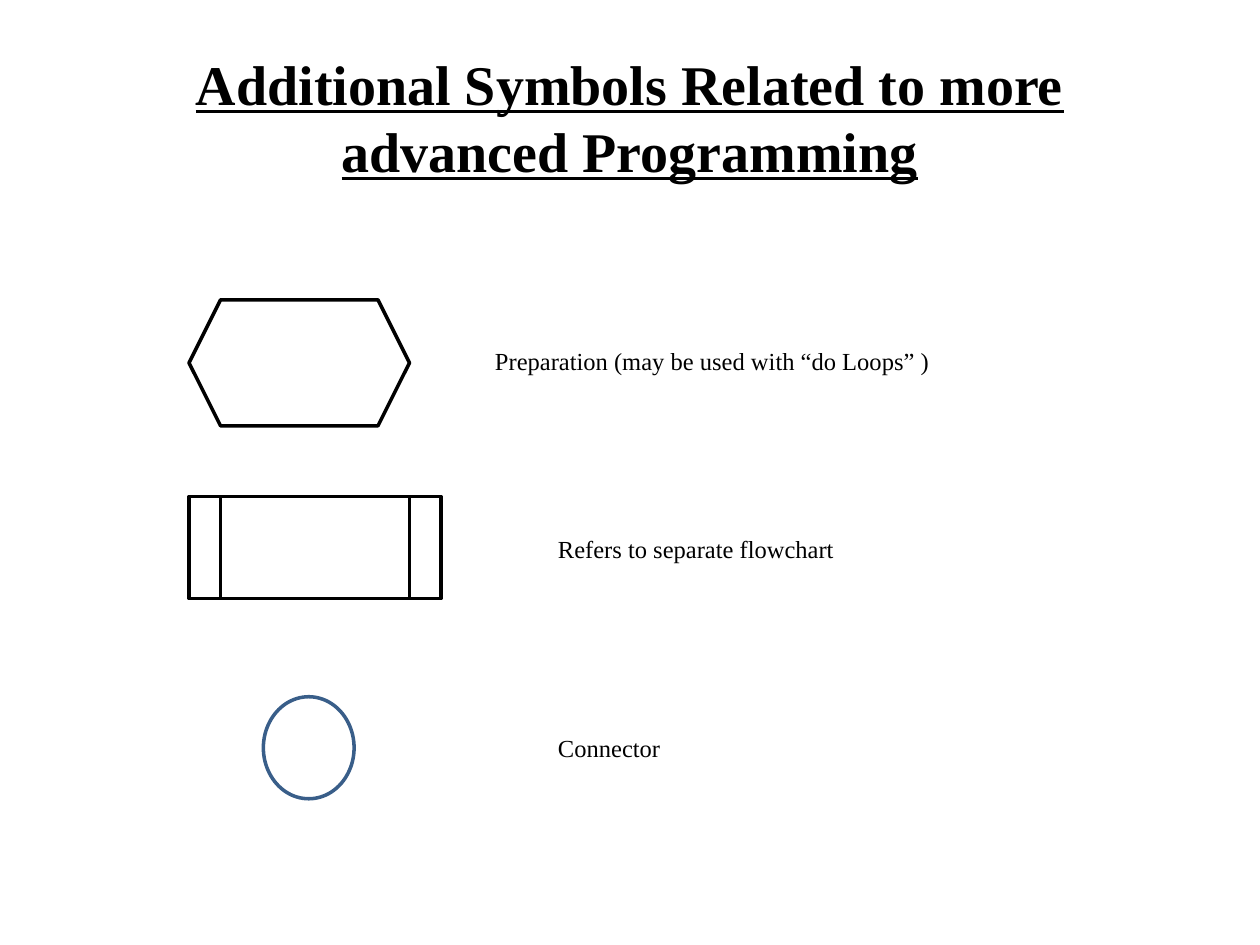
import pptx
import pptx.dml.color
import pptx.enum.shapes
import pptx.enum.text
import pptx.util

Inches = pptx.util.Inches
Kind = pptx.enum.shapes.MSO_SHAPE

# Content: symbol kind, its box, fill, line colour, adjustments; meaning and its box
TITLE = "Additional Symbols Related to more advanced Programming"
TITLE_BOX = (0.5, 0.3, 9, 1.25)
SYMBOLS = [
    (Kind.HEXAGON, (1.5, 2.38, 1.75, 1), "FFFFFF", "000000", [0.25],
     "Preparation (may be used with “do Loops” )", (3.83, 2.7, 4.75, 0.34)),
    (Kind.FLOWCHART_PREDEFINED_PROCESS, (1.5, 3.94, 2, 0.81), "FFFFFF", "000000", [],
     "Refers to separate flowchart", (4.33, 4.19, 2.46, 0.34)),
    (Kind.OVAL, (2.09, 5.53, 0.72, 0.81), None, "395E89", [],
     "Connector", (4.33, 5.77, 1.02, 0.34)),
]
FONT = {"name": "Times New Roman"}
TITLE_FORMAT = {**FONT, "size": pptx.util.Pt(32), "bold": True, "underline": True}
MEANING_FORMAT = {**FONT, "size": pptx.util.Pt(14)}


def paint(color_format, hex_color):
    color_format.rgb = pptx.dml.color.RGBColor.from_string(hex_color)


def write(frame, text, font_format):
    frame.word_wrap = True
    paragraph = frame.paragraphs[0]
    run = paragraph.add_run()
    run.text = text
    for name, value in font_format.items():
        setattr(run.font, name, value)
    paint(run.font.color, "000000")
    return paragraph


def add_symbol(slide, kind, box, fill, line, adjustments):
    symbol = slide.shapes.add_shape(kind, *map(Inches, box))
    symbol.shadow.inherit = False
    for index, value in enumerate(adjustments):
        symbol.adjustments[index] = value
    if fill:
        symbol.fill.solid()
        paint(symbol.fill.fore_color, fill)
    else:
        symbol.fill.background()
    paint(symbol.line.color, line)
    symbol.line.width = pptx.util.Pt(2)


def main():
    deck = pptx.Presentation()
    deck.slide_width, deck.slide_height = Inches(10), Inches(7.5)
    slide = deck.slides.add_slide(deck.slide_layouts[5])

    # Title
    title = slide.shapes.title
    for side, length in zip(("left", "top", "width", "height"), TITLE_BOX):
        setattr(title, side, Inches(length))
    title.text_frame.vertical_anchor = pptx.enum.text.MSO_ANCHOR.MIDDLE
    heading = write(title.text_frame, TITLE, TITLE_FORMAT)
    heading.alignment = pptx.enum.text.PP_ALIGN.CENTER

    # Symbols, each with its meaning
    for kind, box, fill, line, adjustments, meaning, meaning_box in SYMBOLS:
        add_symbol(slide, kind, box, fill, line, adjustments)
        label = slide.shapes.add_textbox(*map(Inches, meaning_box))
        write(label.text_frame, meaning, MEANING_FORMAT)
        label.text_frame.auto_size = pptx.enum.text.MSO_AUTO_SIZE.SHAPE_TO_FIT_TEXT

    deck.save("out.pptx")


if __name__ == "__main__":
    main()
